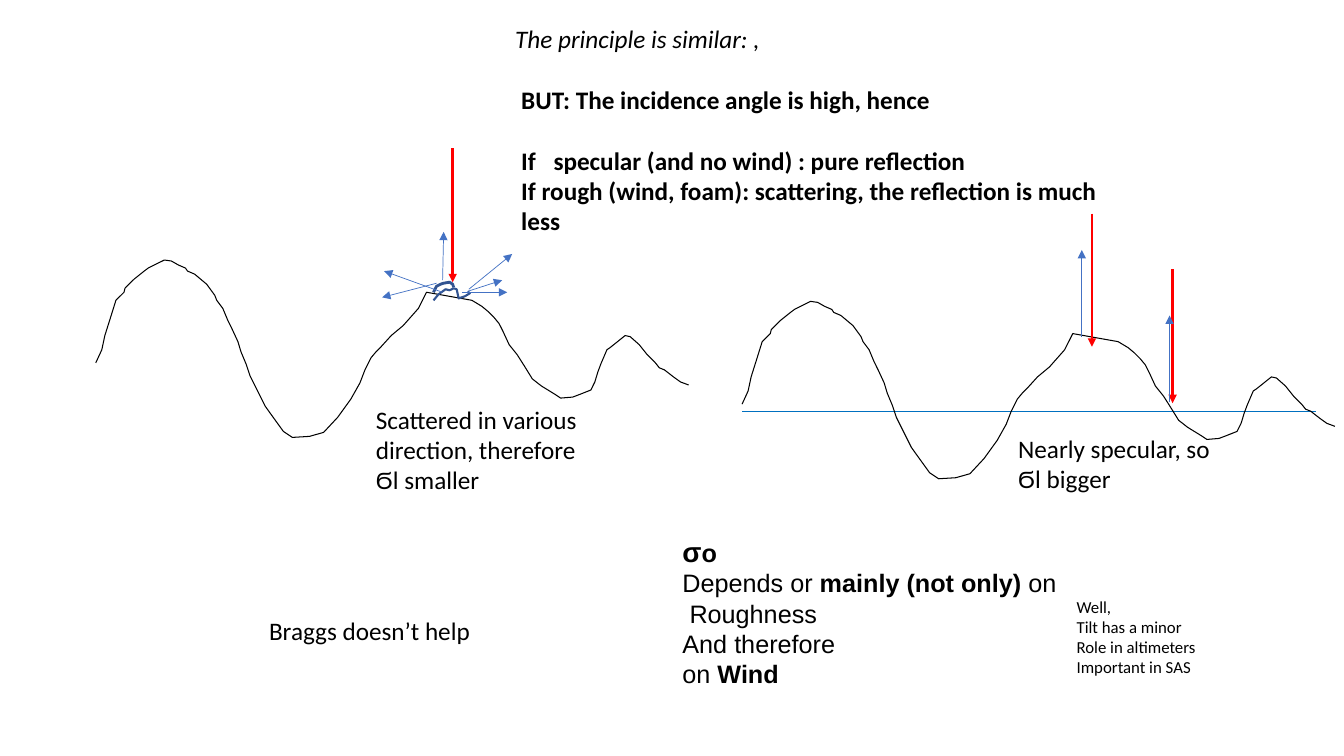
from lxml.etree import SubElement
from pptx import Presentation
from pptx.dml.color import RGBColor
from pptx.enum.shapes import MSO_CONNECTOR
from pptx.enum.text import MSO_ANCHOR, MSO_AUTO_SIZE, PP_ALIGN
from pptx.oxml.ns import qn
from pptx.util import Inches, Pt

BLACK, RED, BLUE, NAVY, SEA = "000000", "FF0000", "4472C4", "325491", "0070C0"

# Outlines, in hundredths of an inch
WAVE = [
    (95, 360), (101, 347), (104, 333), (110, 314), (115, 298), (123, 290),
    (124, 286), (127, 283), (133, 277), (143, 269), (147, 266), (153, 263),
    (157, 261), (163, 258), (170, 259), (177, 263), (184, 266), (186, 269),
    (193, 272), (199, 277), (205, 282), (213, 293), (215, 298), (221, 306),
    (226, 318), (230, 326), (236, 339), (239, 349), (244, 361), (248, 373),
    (253, 383), (263, 403), (268, 410), (281, 428), (290, 434), (307, 433),
    (321, 429), (335, 414), (348, 396), (357, 380), (362, 367), (368, 355),
    (373, 349), (378, 344), (388, 333), (400, 323), (415, 306), (423, 290),
    (468, 298), (478, 304), (484, 309), (490, 315), (495, 321), (499, 329),
    (505, 342), (513, 352), (520, 363), (528, 376), (537, 383), (550, 391),
    (556, 395), (568, 394), (576, 391), (586, 387), (590, 379), (593, 369),
    (596, 361), (602, 347), (605, 345), (610, 341), (615, 337), (620, 333),
    (625, 334), (634, 342), (642, 352), (650, 360), (654, 365), (659, 367),
    (668, 374), (675, 379), (683, 382)]
FOAM = [
    (430, 298), (435, 292), (442, 287), (446, 288), (450, 286), (453, 287),
    (455, 296), (461, 294), (466, 291), (464, 289)]
CREST = [
    (430, 290), (433, 284), (437, 282), (440, 281), (446, 280), (449, 282),
    (450, 285)]

# Arrows: x and y of the start, then of the tip
RAYS = [(4.49, 1.47, 4.49, 2.8), (10.83, 2.12, 10.83, 3.44),
        (11.63, 2.67, 11.63, 4)]
ECHOES = [(10.73, 3.34, 10.73, 2.48), (11.6, 3.99, 11.6, 3.13),
          (4.39, 2.78, 4.4, 2.3), (4.33, 2.81, 3.79, 2.95),
          (4.39, 2.9, 3.81, 2.69), (4.64, 2.89, 4.98, 2.78),
          (4.58, 2.9, 5.03, 2.9), (4.65, 2.87, 5.08, 2.52)]


def paint(line, color, width):
    line.color.rgb = RGBColor.from_string(color)
    line.width = Pt(width)


def add_line(slide, ends, color, width, arrow=True):
    link = slide.shapes.add_connector(
        MSO_CONNECTOR.STRAIGHT, *[Inches(v) for v in ends])
    paint(link.line, color, width)
    props = link._element.spPr
    SubElement(props, qn("a:effectLst"))
    if arrow:
        SubElement(props.find(qn("a:ln")), qn("a:tailEnd"), type="triangle")


def add_curve(slide, points, color, width, shift=(0, 0)):
    pen = slide.shapes.build_freeform(*points[0], scale=Inches(0.01))
    pen.add_line_segments(points[1:], close=False)
    curve = pen.convert_to_shape(*[Inches(v) for v in shift])
    curve.shadow.inherit = False
    curve.fill.background()
    paint(curve.line, color, width)


def place(shape, box):
    shape.left, shape.top, shape.width, shape.height = [
        Inches(v) for v in box]


def style(font, size, name="Calibri", bold=False, italic=False):
    font.size, font.name = Pt(size), name
    font.bold, font.italic = bold, italic
    font.color.rgb = RGBColor.from_string(BLACK)


def indent(para, inches):
    props = para._p.get_or_add_pPr()
    props.set("marL", str(Inches(inches)))
    props.set("indent", "0")


def add_note(slide, box, lines, size=18):
    note = slide.shapes.add_textbox(*[Inches(v) for v in box])
    frame = note.text_frame
    frame.word_wrap = False
    frame.text = "\n".join(lines)
    for para in frame.paragraphs:
        style(para.font, size)


def add_title(slide):
    title = slide.shapes.title
    place(title, (5.01, 0.18, 6.02, 2.22))
    frame = title.text_frame
    frame.text = "\n".join([
        "The principle is similar: ,",
        "BUT: The incidence angle is high, hence",
        "If\tspecular (and no wind) : pure reflection",
        "If rough (wind, foam): scattering, the reflection is much less"])
    frame.word_wrap = True
    frame.auto_size = MSO_AUTO_SIZE.NONE
    frame.vertical_anchor = MSO_ANCHOR.TOP
    lead, but, mirror, rough = frame.paragraphs
    # Tab after "If"
    tabs = SubElement(mirror._p.get_or_add_pPr(), qn("a:tabLst"))
    SubElement(tabs, qn("a:tab"), pos=str(Inches(0.32)), algn="l")
    for para in frame.paragraphs:
        para.alignment = PP_ALIGN.LEFT
        style(para.font, 18, bold=para.text != lead.text,
              italic=para.text == lead.text)
    indent(but, 0.06)
    but.space_before = mirror.space_before = Pt(22)


def add_sigma(slide):
    box = slide.shapes.add_textbox(
        Inches(6.67), Inches(5.25), Inches(3.91), Inches(1.94))
    frame = box.text_frame
    frame.word_wrap = False
    # Each run: text, bold, size
    lines = [
        [("σ", True, 20), ("o", True, 18)],
        [("Depends or ", False, 18), ("mainly (not only) ", True, 18),
         ("on", False, 18)],
        [("Roughness", False, 18)],
        [("And therefore", False, 18)],
        [("on", False, 18), (" Wind", True, 18)]]
    for row, runs in enumerate(lines):
        para = frame.add_paragraph() if row else frame.paragraphs[0]
        for text, bold, size in runs:
            run = para.add_run()
            run.text = text
            style(run.font, size, "Arial", bold)
    indent(frame.paragraphs[2], 0.07)


def main():
    deck = Presentation()
    deck.slide_width, deck.slide_height = Inches(13.33), Inches(7.5)
    slide = deck.slides.add_slide(deck.slide_layouts[5])

    # Sea level and the two wave profiles
    add_line(slide, (7.36, 4.08, 13.05, 4.08), SEA, 0.75, arrow=False)
    for shift in [(0, 0), (6.41, 0.41)]:
        add_curve(slide, WAVE, BLACK, 0.75, shift)

    # Rough crest
    add_curve(slide, FOAM, NAVY, 1.5)
    add_curve(slide, CREST, NAVY, 2)

    # Incoming rays and reflections
    for ends in RAYS:
        add_line(slide, ends, RED, 2)
    for ends in ECHOES:
        add_line(slide, ends, BLUE, 0.5)

    # Text
    add_title(slide)
    add_sigma(slide)
    add_note(slide, (3.63, 3.96, 2.23, 1.01),
             ["Scattered in various", "direction, therefore", "Ϭl smaller"])
    add_note(slide, (10, 4.25, 2.12, 0.71),
             ["Nearly specular, so", "Ϭl bigger"])
    add_note(slide, (2.57, 6.06, 2.22, 0.4), ["Braggs doesn’t help"])
    add_note(slide, (10.58, 5.87, 1.4, 0.91),
             ["Well,", "Tilt has a minor", "Role in altimeters",
              "Important in SAS"], 12)

    deck.save("out.pptx")


if __name__ == "__main__":
    main()
